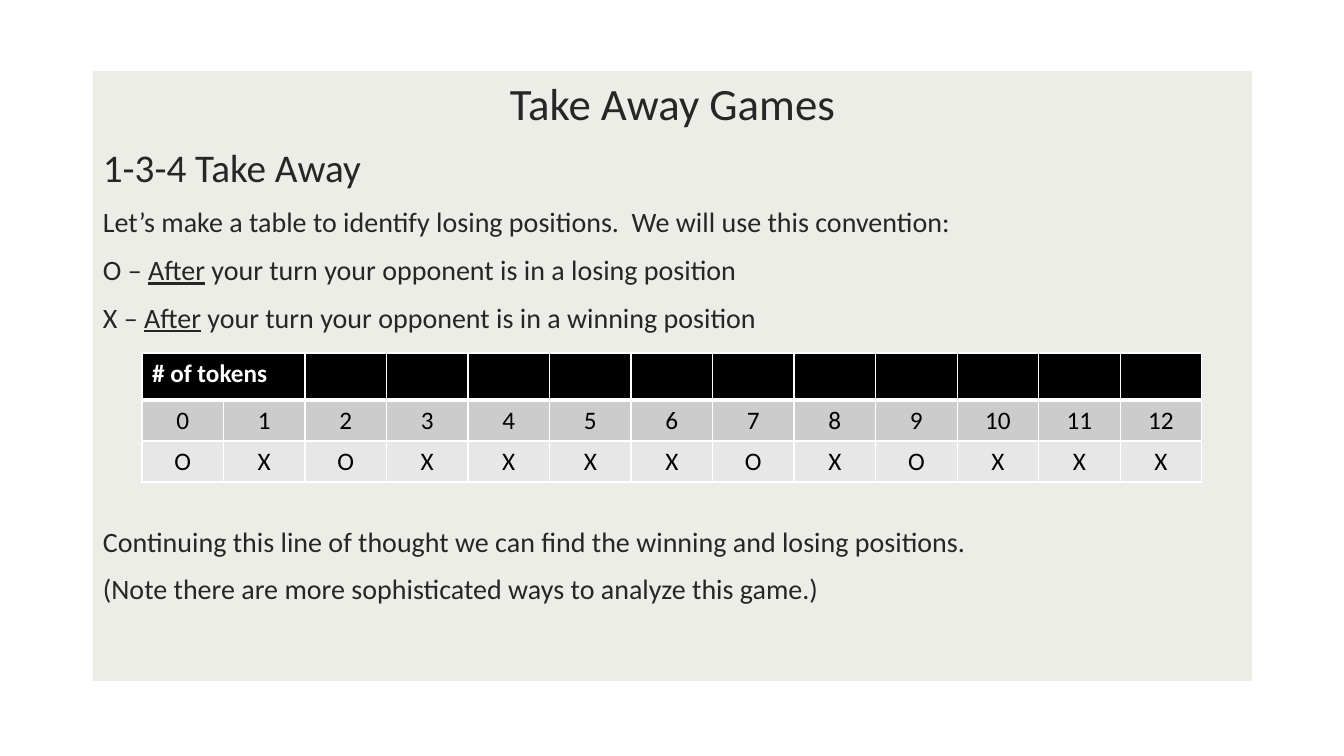
from dataclasses import dataclass

from lxml.etree import SubElement
from pptx import Presentation
from pptx.dml.color import RGBColor
from pptx.enum.text import MSO_AUTO_SIZE as AutoSize, MSO_ANCHOR as Anchor, PP_ALIGN as Align
from pptx.oxml.ns import qn
from pptx.slide import Slide
from pptx.table import _Cell as Cell
from pptx.text.text import _Paragraph as Paragraph
from pptx.util import Emu, Pt

EMU_PER_PX = 914400 / 100.8


@dataclass(frozen=True)
class Theme:
    font: str = "Calibri"
    panel: str = "EBEDE6"
    ink: str = "262626"
    header: str = "000000"
    header_ink: str = "FFFFFF"
    counts: str = "CCCCCC"
    outcomes: str = "E7E7E7"
    cell_ink: str = "000000"
    border: str = "FFFFFF"
    title_size: int = 32
    subtitle_size: int = 28
    body_size: int = 20
    cell_size: int = 18
    thin: int = 1
    thick: int = 3


@dataclass(frozen=True)
class Box:
    left: int
    top: int
    width: int
    height: int


@dataclass(frozen=True)
class Line:
    """One paragraph; the part between underscores is underlined."""
    text: str
    size: int
    align: Align = Align.LEFT
    space_before: int = 10


@dataclass(frozen=True)
class Row:
    texts: list[str]
    height: int
    fill: str
    ink: str
    align: Align
    bold: bool
    top_border: int
    bottom_border: int


THEME = Theme()
PANEL = Box(93, 71, 1159, 610)
TOKEN_TABLE = Box(142, 353, 1060, 129)
TOKEN_COUNTS = range(13)
OUTCOMES = "OXOXXXXOXOXXX"
SPACE_FOR_TABLE = 136

LINES = [
    Line("Take Away Games", THEME.title_size, Align.CENTER),
    Line("1-3-4 Take Away", THEME.subtitle_size),
    Line("Let’s make a table to identify losing positions.  We will use this convention:",
         THEME.body_size),
    Line("O – _After_ your turn your opponent is in a losing position", THEME.body_size),
    Line("X – _After_ your turn your opponent is in a winning position", THEME.body_size),
    Line("Continuing this line of thought we can find the winning and losing positions.",
         THEME.body_size, space_before=SPACE_FOR_TABLE),
    Line("(Note there are more sophisticated ways to analyze this game.)", THEME.body_size),
]

ROWS = [
    Row(["# of tokens"] + [""] * (len(TOKEN_COUNTS) - 1), 47, THEME.header,
        THEME.header_ink, Align.LEFT, True, THEME.thin, THEME.thick),
    Row([str(count) for count in TOKEN_COUNTS], 41, THEME.counts,
        THEME.cell_ink, Align.CENTER, False, THEME.thick, THEME.thin),
    Row(list(OUTCOMES), 41, THEME.outcomes,
        THEME.cell_ink, Align.CENTER, False, THEME.thin, THEME.thin),
]


def px(length: float) -> Emu:
    return Emu(round(length * EMU_PER_PX))


def place(box: Box) -> list[Emu]:
    return [px(length) for length in (box.left, box.top, box.width, box.height)]


def set_format(target: object, values: dict[str, object]) -> None:
    for name, value in values.items():
        setattr(target, name, value)


def add_run(paragraph: Paragraph, text: str, size: int, ink: str, **extra: bool) -> None:
    run = paragraph.add_run()
    run.text = text
    set_format(run.font, {"name": THEME.font, "size": Pt(size), **extra})
    run.font.color.rgb = RGBColor.from_string(ink)


def add_panel(slide: Slide, box: Box, lines: list[Line]) -> None:
    panel = slide.shapes.add_textbox(*place(box))
    panel.fill.solid()
    panel.fill.fore_color.rgb = RGBColor.from_string(THEME.panel)
    frame = panel.text_frame
    set_format(frame, {"word_wrap": True, "auto_size": AutoSize.NONE,
                       "vertical_anchor": Anchor.TOP})
    for index, line in enumerate(lines):
        paragraph = frame.add_paragraph() if index else frame.paragraphs[0]
        set_format(paragraph, {"alignment": line.align,
                               "space_before": Pt(line.space_before)})
        for part, text in enumerate(line.text.split("_")):
            add_run(paragraph, text, line.size, THEME.ink, underline=part % 2 == 1)


def set_borders(cell: Cell, widths: dict[str, int]) -> None:
    properties = cell._tc.get_or_add_tcPr()
    for side, width in widths.items():
        border = SubElement(properties, qn(f"a:ln{side}"), w=str(Pt(width)))
        fill = SubElement(border, qn("a:solidFill"))
        SubElement(fill, qn("a:srgbClr"), val=THEME.border)


def fill_cell(cell: Cell, text: str, row: Row) -> None:
    set_borders(cell, {"L": THEME.thin, "R": THEME.thin,
                       "T": row.top_border, "B": row.bottom_border})
    cell.fill.solid()
    cell.fill.fore_color.rgb = RGBColor.from_string(row.fill)
    paragraph = cell.text_frame.paragraphs[0]
    paragraph.alignment = row.align
    if text:
        add_run(paragraph, text, THEME.cell_size, row.ink, bold=row.bold)


def add_token_table(slide: Slide, box: Box, rows: list[Row]) -> None:
    column_count = len(TOKEN_COUNTS)
    table = slide.shapes.add_table(len(rows), column_count, *place(box)).table
    table.horz_banding = False
    for column in table.columns:
        column.width = px(box.width / column_count)
    for row_index, row in enumerate(rows):
        table.rows[row_index].height = px(row.height)
        for column_index, text in enumerate(row.texts):
            fill_cell(table.cell(row_index, column_index), text, row)
    table.cell(0, 0).merge(table.cell(0, 1))


def main() -> None:
    presentation = Presentation()
    set_format(presentation, {"slide_width": px(1344), "slide_height": px(756)})
    slide = presentation.slides.add_slide(presentation.slide_layouts[6])

    # Panel with the title and the explanation
    add_panel(slide, PANEL, LINES)

    # Winning and losing positions by number of tokens
    add_token_table(slide, TOKEN_TABLE, ROWS)

    presentation.save("out.pptx")


if __name__ == "__main__":
    main()
